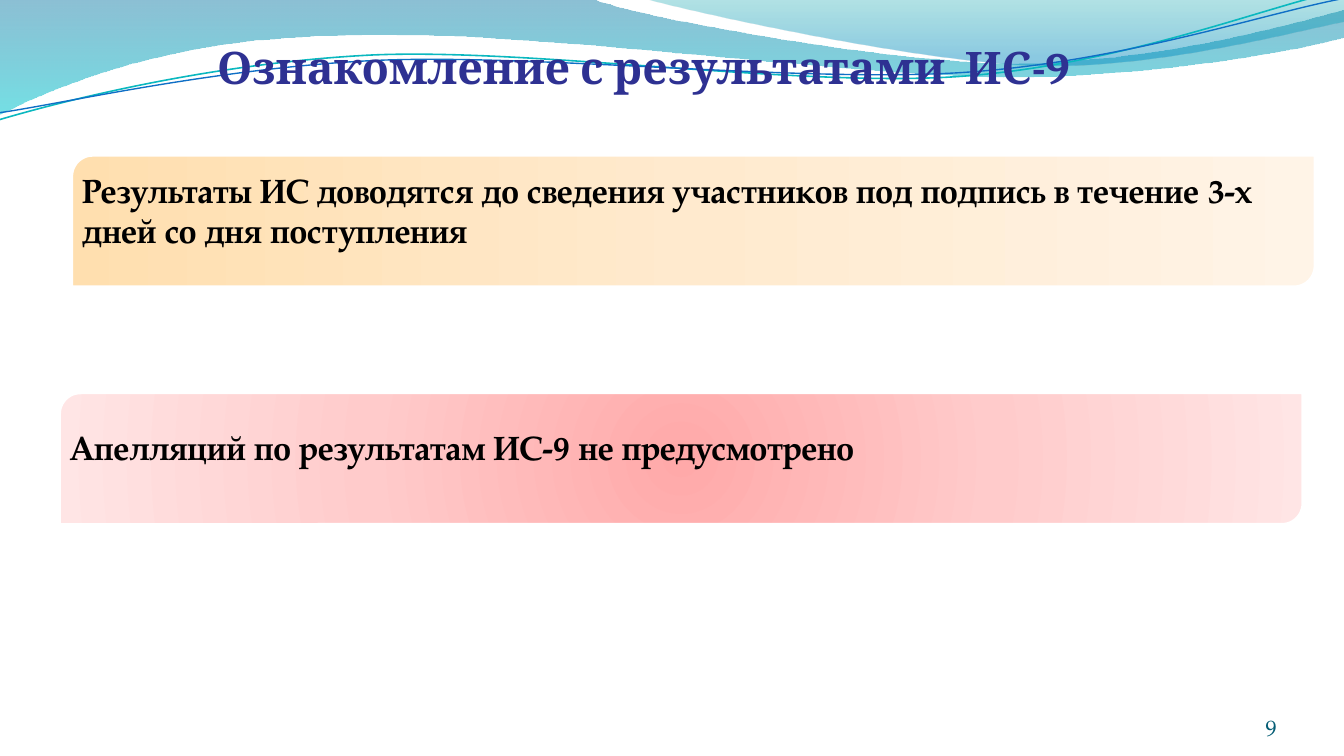
import pptx
import pptx.dml.color
import pptx.enum.shapes
import pptx.enum.text
import pptx.oxml
import pptx.oxml.ns
import pptx.util

Cm = pptx.util.Cm
Pt = pptx.util.Pt
qn = pptx.oxml.ns.qn
ALIGN = pptx.enum.text.PP_ALIGN
ANCHOR = pptx.enum.text.MSO_ANCHOR
BODY_FONT = "TeX Gyre Pagella"
NAMESPACE = pptx.oxml.ns.nsdecls("a")
LINEAR = '<a:lin ang="{}" scaled="0"/>'
CENTRED = ('<a:path path="circle"><a:fillToRect l="50000" t="50000" '
           'r="50000" b="50000"/></a:path>')

BROAD_WAVE = [
    (0, 0), (11.18, -0.03),
    (12.09, 0.33, 16.87, 1.19, 19.25, 1.19),
    (21.67, 1.19, 24.33, 0.48, 25.4, 0.18), (25.43, 0.69),
    (24.97, 0.84, 22.1, 1.45, 18.95, 1.45),
    (15.8, 1.42, 9.7, 0.53, 6.53, 0.66),
    (3.28, 0.69, 1.17, 1.57, -0.03, 2.16),
]
RIGHT_WAVE = [
    (12.17, -0.03),
    (12.93, 0.2, 17.32, 1.17, 19.53, 1.24),
    (21.74, 1.32, 24.41, 0.61, 25.4, 0.41), (25.4, 0),
]
TEAL_LINE = [
    (0, 2.26),
    (1.22, 1.9, 4.01, 1.19, 7.04, 1.04),
    (10.06, 0.91, 15.04, 1.65, 18.08, 1.45),
    (21.16, 1.24, 23.85, 0.15, 25.35, -0.18),
]
BLUE_LINE = [
    (0, 2.13),
    (1.19, 1.96, 4.17, 1.27, 7.19, 1.14),
    (10.24, 1.02, 15.16, 1.57, 18.21, 1.37),
    (21.23, 1.17, 23.9, 0.25, 25.4, -0.03),
]


def color(value):
    return pptx.dml.color.RGBColor.from_string(value)


def fill_gradient(shape, stops, direction):
    shape.fill.gradient()
    gradient = shape._element.spPr.find(qn("a:gradFill"))
    for child in list(gradient):
        gradient.remove(child)
    stop_xml = "".join(
        f'<a:gs pos="{position * 1000}"><a:srgbClr val="{value}">'
        f'<a:alpha val="{opacity * 1000}"/></a:srgbClr></a:gs>'
        for position, value, opacity in stops)
    source = pptx.oxml.parse_xml(
        f'<a:gradFill {NAMESPACE}>'
        f'<a:gsLst>{stop_xml}</a:gsLst>{direction}</a:gradFill>')
    gradient.extend(list(source))


def bend(shape, outline):
    corners = list(shape._element.iter(qn("a:lnTo")))
    for segment in outline[1:]:
        count = len(segment) // 2
        used, corners = corners[:count], corners[count:]
        if count == 3:
            curve = pptx.oxml.parse_xml(f"<a:cubicBezTo {NAMESPACE}/>")
            used[0].addprevious(curve)
            for corner in used:
                curve.append(corner[0])
                corner.getparent().remove(corner)


def add_outline(page, outline, close):
    points = [(Cm(segment[index]), Cm(segment[index + 1]))
              for segment in outline for index in range(0, len(segment), 2)]
    builder = page.shapes.build_freeform(*points[0], scale=1.0)
    builder.add_line_segments(points[1:], close=close)
    shape = builder.convert_to_shape()
    bend(shape, outline)
    shape.shadow.inherit = False
    return shape


def add_wave(page, outline, stops):
    wave = add_outline(page, outline, True)
    fill_gradient(wave, stops, LINEAR.format(5400000))
    wave.line.fill.background()


def add_wave_line(page, outline, value, width):
    curve = add_outline(page, outline, False)
    curve.fill.background()
    curve.line.color.rgb = color(value)
    curve.line.width = Pt(width)


def write_text(shape, text, size, font, value, bold, align, anchor, insets):
    frame = shape.text_frame
    frame.text = text
    frame.word_wrap = True
    frame.vertical_anchor = anchor
    (frame.margin_left, frame.margin_top,
     frame.margin_right, frame.margin_bottom) = map(Cm, insets)
    para = frame.paragraphs[0]
    para.alignment = align
    span = para.runs[0]
    span.font.size = Pt(size)
    span.font.name = font
    span.font.bold = bold
    span.font.color.rgb = color(value)


def add_label(page, place, *style):
    box = page.shapes.add_textbox(*map(Cm, place))
    write_text(box, *style)


def add_panel(page, left, top, text, colors, direction):
    panel = page.shapes.add_shape(
        pptx.enum.shapes.MSO_SHAPE.ROUND_2_DIAG_RECTANGLE,
        Cm(left), Cm(top), Cm(23.55), Cm(2.54))
    panel.shadow.inherit = False
    stops = [(50 * index, value, 100) for index, value in enumerate(colors)]
    fill_gradient(panel, stops, direction)
    panel.line.color.rgb = color("FFFFFF")
    panel.line.width = Pt(3)
    write_text(panel, text, 18, BODY_FONT, "000000", True,
               ALIGN.LEFT, ANCHOR.MIDDLE, (0.1, 0.1, 0.1, 0.52))


def main():
    deck = pptx.Presentation()
    deck.slide_width, deck.slide_height = Cm(25.4), Cm(14.29)
    page = deck.slides.add_slide(deck.slide_layouts[6])

    add_wave(page, BROAD_WAVE, [(0, "0074A1", 45), (100, "00C6CF", 55)])
    add_wave(page, RIGHT_WAVE, [(0, "00A1A9", 30), (80, "008BBF", 45)])
    add_wave_line(page, TEAL_LINE, "0AB8BF", 0.85)
    add_wave_line(page, BLUE_LINE, "0F6FC6", 0.75)

    add_label(page, (22.02, 13.24, 2.11, 0.76), "9", 12, BODY_FONT, "045D75",
              False, ALIGN.RIGHT, ANCHOR.BOTTOM, (0, 0, 0, 0))
    add_label(page, (2.7, 0.63, 18.92, 1.27),
              "Ознакомление с результатами  ИС-9", 24, "Cambria", "2E3192",
              True, ALIGN.CENTER, ANCHOR.TOP, (0.25, 0.13, 0.25, 0.13))

    add_panel(page, 1.33, 2.91,
              "Результаты ИС доводятся до сведения участников под подпись "
              "в течение 3-х дней со дня поступления",
              ("FFDFAF", "FFEACE", "FFF4E7"), LINEAR.format(0))
    add_panel(page, 1.1, 7.4,
              "Апелляций по результатам ИС-9 не предусмотрено",
              ("FFA9A9", "FFCBCB", "FFE5E5"), CENTRED)

    deck.save("out.pptx")


if __name__ == "__main__":
    main()
